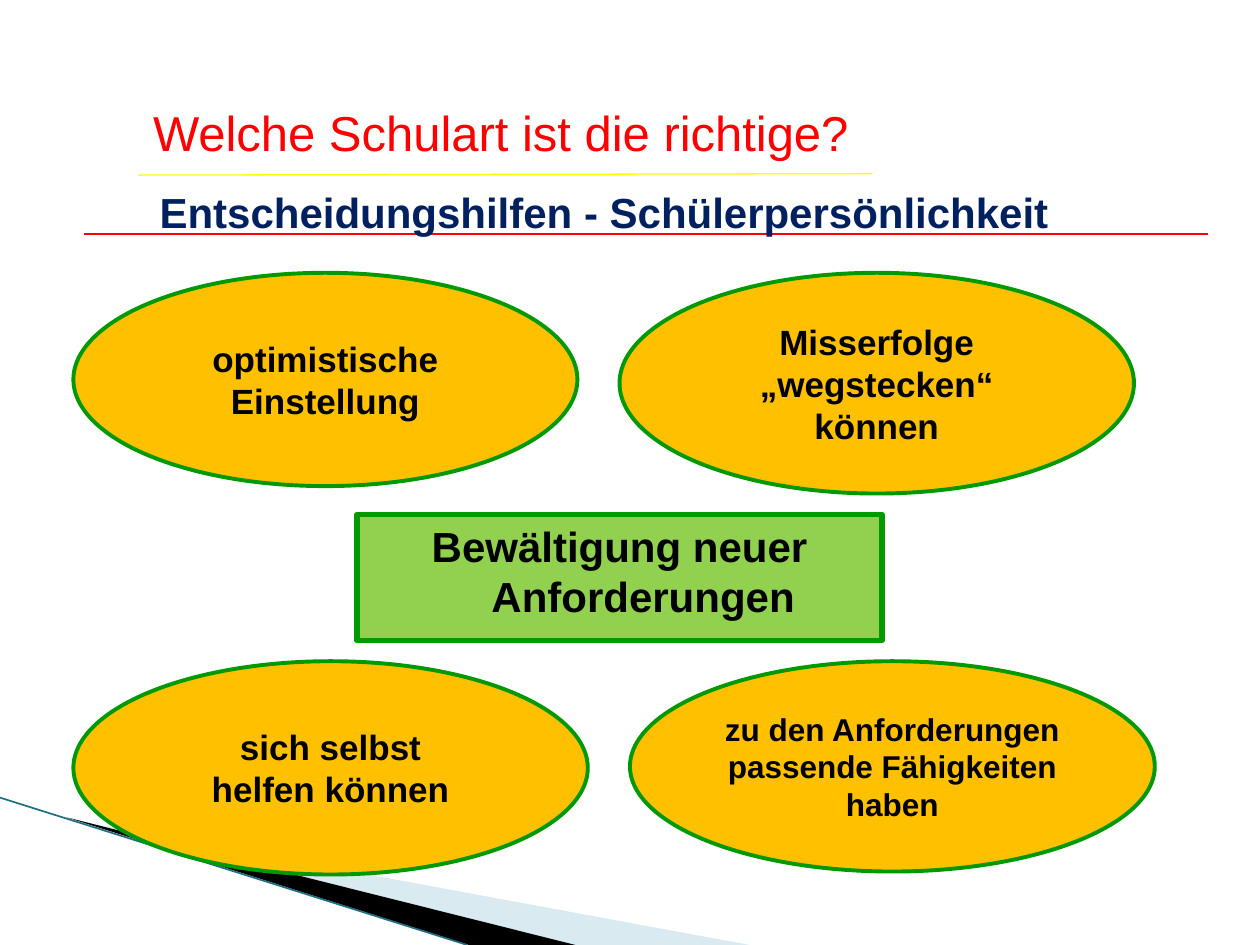
"""Build the slide on choosing a school type: the pupil's personality."""
from lxml.etree import SubElement
from pptx import Presentation
from pptx.dml.color import RGBColor
from pptx.enum.shapes import MSO_CONNECTOR, MSO_SHAPE
from pptx.enum.text import MSO_ANCHOR, PP_ALIGN
from pptx.oxml.ns import qn
from pptx.util import Cm, Pt


def color(value):
    return RGBColor.from_string(value)


def write(shape, text, size, text_color, bold=True, anchor=MSO_ANCHOR.MIDDLE):
    frame = shape.text_frame
    frame.word_wrap = True
    frame.vertical_anchor = anchor
    frame.text = text
    for paragraph in frame.paragraphs:
        paragraph.alignment = PP_ALIGN.CENTER
        paragraph.font.name = "Arial"
        paragraph.font.size = Pt(size)
        paragraph.font.bold = bold
        paragraph.font.color.rgb = color(text_color)


presentation = Presentation()
presentation.slide_width, presentation.slide_height = Cm(25.4), Cm(19.05)
slide = presentation.slides.add_slide(presentation.slide_layouts[5])
shapes = slide.shapes

wedges = [
    ("A0CBDC", 40, [(1.4, 16.52), (15.11, 19.05), (11.58, 19.05)]),
    ("000000", 100, [(1.35, 16.48), (11.6, 19.05), (9.45, 19.05)]),
]
for fill, opacity, points in wedges:
    corners = [(Cm(x), Cm(y)) for x, y in points]
    builder = shapes.build_freeform(*corners[0])
    builder.add_line_segments(corners[1:])
    wedge = builder.convert_to_shape()
    wedge.shadow.inherit = False
    wedge.fill.solid()
    wedge.fill.fore_color.rgb = color(fill)
    wedge.line.fill.background()
    if opacity < 100:
        fill_color = wedge._element.spPr.find(qn("a:solidFill"))[0]
        SubElement(fill_color, qn("a:alpha"), val=str(opacity * 1000))

lines = [
    (0, 16.08, 9.42, 19.05, "1F6F82", 0.95),
    (2.79, 3.53, 17.58, 3.5, "FFFF00", 0.75),
    (1.7, 4.72, 24.36, 4.72, "FF0000", 0.75),
]
for x1, y1, x2, y2, line_color, width in lines:
    line = shapes.add_connector(MSO_CONNECTOR.STRAIGHT, Cm(x1), Cm(y1), Cm(x2), Cm(y2))
    line.line.color.rgb = color(line_color)
    line.line.width = Pt(width)
    SubElement(line._element.spPr, qn("a:effectLst"))

title = shapes.title
title.left, title.top, title.width, title.height = Cm(1.7), Cm(1.93), Cm(16.79), Cm(1.45)
write(title, "Welche Schulart ist die richtige?", 28, "FF0000", bold=False)

subtitle = shapes.add_textbox(Cm(2.77), Cm(3.61), Cm(18.82), Cm(1.3))
write(subtitle, "Entscheidungshilfen - Schülerpersönlichkeit", 24, "002060")

ellipse, rectangle = MSO_SHAPE.OVAL, MSO_SHAPE.RECTANGLE
boxes = [
    (ellipse, 1.48, 5.5, 10.16, 4.3, "optimistische Einstellung", 20),
    (ellipse, 1.48, 13.33, 10.37, 4.3, "sich selbst\nhelfen können", 20),
    (ellipse, 12.49, 5.5, 10.37, 4.45, "Misserfolge\n„wegstecken“\vkönnen", 20),
    (ellipse, 12.7, 13.33, 10.58, 4.24, "zu den Anforderungen passende Fähigkeiten haben", 18),
    (rectangle, 7.2, 10.37, 10.58, 2.54, "Bewältigung neuer\vAnforderungen", 24),
]
for kind, left, top, width, height, text, size in boxes:
    box = shapes.add_shape(kind, Cm(left), Cm(top), Cm(width), Cm(height))
    box.shadow.inherit = False
    box.fill.solid()
    box.fill.fore_color.rgb = color("FFC000" if kind == ellipse else "92D050")
    box.line.color.rgb = color("009900")
    box.line.width = Pt(2.25 if kind == ellipse else 3)
    write(box, text, size, "000000", anchor=MSO_ANCHOR.MIDDLE if kind == ellipse else MSO_ANCHOR.TOP)
    if kind == rectangle:
        properties = box.text_frame.paragraphs[0]._p.get_or_add_pPr()
        properties.set("marL", str(Cm(0.95)))
        properties.set("indent", str(-Cm(0.95)))

presentation.save("out.pptx")
